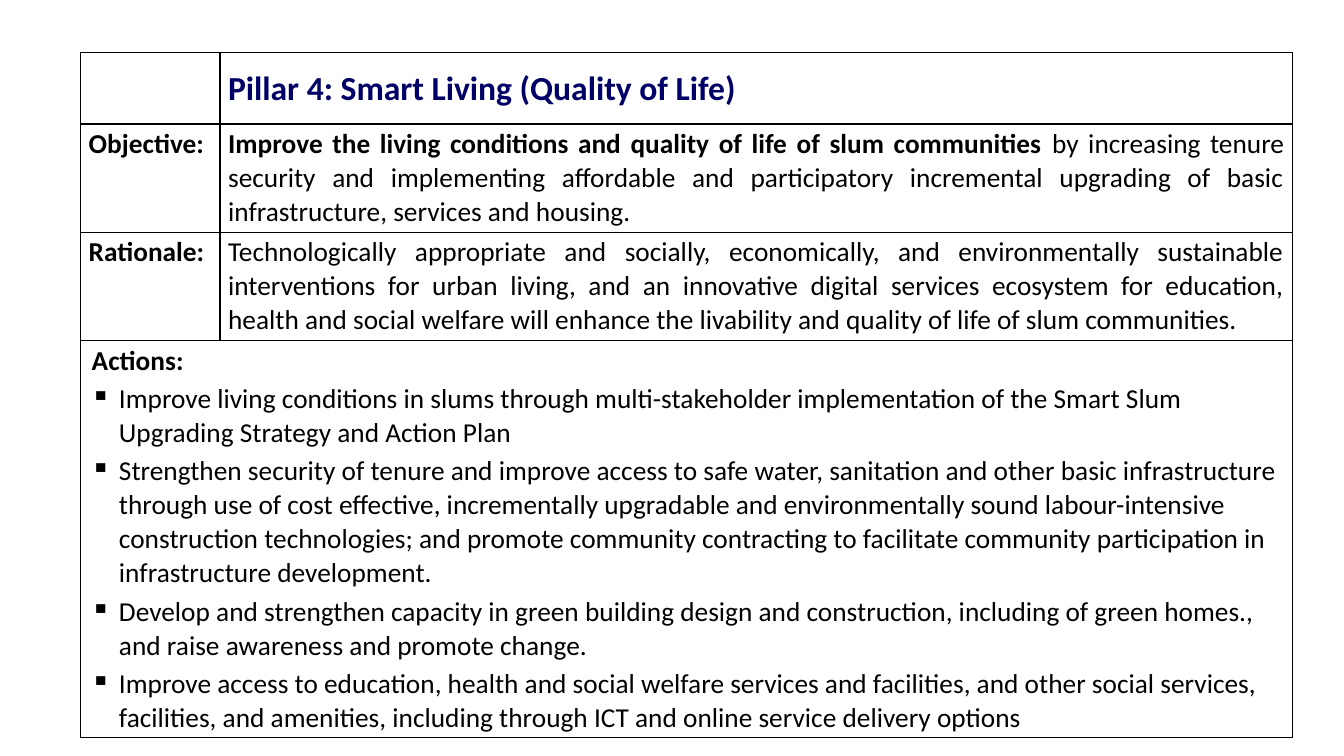
from dataclasses import dataclass

from lxml.etree import SubElement
from pptx import Presentation
from pptx.dml.color import RGBColor
from pptx.enum.text import MSO_ANCHOR, PP_ALIGN
from pptx.oxml.ns import qn
from pptx.util import Inches, Pt


@dataclass(frozen=True)
class Theme:
    font: str = "Calibri"
    title_size: float = 24
    body_size: float = 19.5
    title_color: str = "000066"
    ink: str = "000000"
    paper: str = "FFFFFF"
    border: float = 1
    line_spacing: float = 1.02


THEME = Theme()
TABLE_BOX = (0.8, 0.52, 12.02, 6.29)
LABEL_SHARE = 0.115
ROW_HEIGHTS = (0.71, 0.96, 0.96, 3.66)

TITLE = "Pillar 4: Smart Living (Quality of Life)"
# Each row: label, bold lead-in, plain text
SUMMARY = [
    ("Objective:",
     "Improve the living conditions and quality of life of slum communities",
     " by increasing tenure security and implementing affordable and participatory "
     "incremental upgrading of basic infrastructure, services and housing."),
    ("Rationale:",
     "",
     "Technologically appropriate and socially, economically, and environmentally "
     "sustainable interventions for urban living, and an innovative digital services "
     "ecosystem for education, health and social welfare will enhance the livability "
     "and quality of life of slum communities."),
]
ACTIONS = [
    "Improve living conditions in slums through multi-stakeholder implementation of "
    "the Smart Slum Upgrading Strategy and Action Plan",
    "Strengthen security of tenure and improve access to safe water, sanitation and "
    "other basic infrastructure through use of cost effective, incrementally "
    "upgradable and environmentally sound labour-intensive construction technologies; "
    "and promote community contracting to facilitate community participation in "
    "infrastructure development.",
    "Develop and strengthen capacity in green building design and construction, "
    "including of green homes., and raise awareness and promote change.",
    "Improve access to education, health and social welfare services and facilities, "
    "and other social services, facilities, and amenities, including through ICT and "
    "online service delivery options",
]


def style_cell(cell, side_margin=0.08):
    cell.margin_left = cell.margin_right = Inches(side_margin)
    cell.margin_top = cell.margin_bottom = Inches(0.03)
    properties = cell._tc.get_or_add_tcPr()
    for side in ("lnL", "lnR", "lnT", "lnB"):
        line = SubElement(properties, qn(f"a:{side}"), w=str(Pt(THEME.border)))
        fill = SubElement(line, qn("a:solidFill"))
        SubElement(fill, qn("a:srgbClr"), val=THEME.ink)
    cell.fill.solid()
    cell.fill.fore_color.rgb = RGBColor.from_string(THEME.paper)


def write(para, text, bold=False, size=THEME.body_size, color=THEME.ink,
          align=PP_ALIGN.LEFT, after=0):
    para.text = text
    para.alignment = align
    para.line_spacing = THEME.line_spacing
    para.space_after = Pt(after)
    para.font.name = THEME.font
    para.font.size = Pt(size)
    para.font.bold = bold
    para.font.color.rgb = RGBColor.from_string(color)


def indent(para, left, hanging=0, bullet=None):
    properties = para._p.get_or_add_pPr()
    properties.set("marL", str(Inches(left)))
    properties.set("indent", str(Inches(-hanging)))
    if bullet:
        mark = SubElement(properties, qn("a:buChar"), char=bullet)
        properties.find(qn("a:defRPr")).addprevious(mark)


def fill_title(cell):
    cell.vertical_anchor = MSO_ANCHOR.MIDDLE
    write(cell.text_frame.paragraphs[0], TITLE, bold=True, size=THEME.title_size,
          color=THEME.title_color, after=8)


def fill_summary(label_cell, text_cell, label, lead, text):
    write(label_cell.text_frame.paragraphs[0], label, bold=True,
          align=PP_ALIGN.JUSTIFY)
    para = text_cell.text_frame.paragraphs[0]
    write(para, lead, align=PP_ALIGN.JUSTIFY)
    for span in para.runs:
        span.font.bold = True
    para.add_run().text = text


def fill_actions(cell):
    frame = cell.text_frame
    heading = frame.paragraphs[0]
    write(heading, "Actions:", bold=True, after=3)
    indent(heading, 0.08)
    for action in ACTIONS:
        para = frame.add_paragraph()
        write(para, action, after=3)
        indent(para, 0.35, hanging=0.28, bullet="▪")


def apply_fonts(table):
    """Carry each paragraph's font to its runs, which table styles would override."""
    for cell in table.iter_cells():
        for para in cell.text_frame.paragraphs:
            for span in para.runs:
                span.font.name = para.font.name
                span.font.size = para.font.size
                span.font.color.rgb = para.font.color.rgb
                if span.font.bold is None:
                    span.font.bold = para.font.bold


def add_pillar_table(page, box):
    left, top, width, height = map(Inches, box)
    table = page.shapes.add_table(len(ROW_HEIGHTS), 2, left, top, width, height).table
    table.first_row = table.horz_banding = False
    table.columns[0].width = int(width * LABEL_SHARE)
    table.columns[1].width = width - table.columns[0].width
    for row, row_height in zip(table.rows, ROW_HEIGHTS):
        row.height = Inches(row_height)

    last = len(ROW_HEIGHTS) - 1
    for index, row in enumerate(table.rows):
        for cell in row.cells:
            style_cell(cell, 0.03 if index == last else 0.08)
    table.cell(last, 0).merge(table.cell(last, 1))

    fill_title(table.cell(0, 1))
    for index, entry in enumerate(SUMMARY, start=1):
        fill_summary(table.cell(index, 0), table.cell(index, 1), *entry)
    fill_actions(table.cell(last, 0))
    apply_fonts(table)


def main():
    deck = Presentation()
    deck.slide_width, deck.slide_height = Inches(13.33), Inches(7.5)
    page = deck.slides.add_slide(deck.slide_layouts[6])
    add_pillar_table(page, TABLE_BOX)
    deck.save("out.pptx")


if __name__ == "__main__":
    main()
